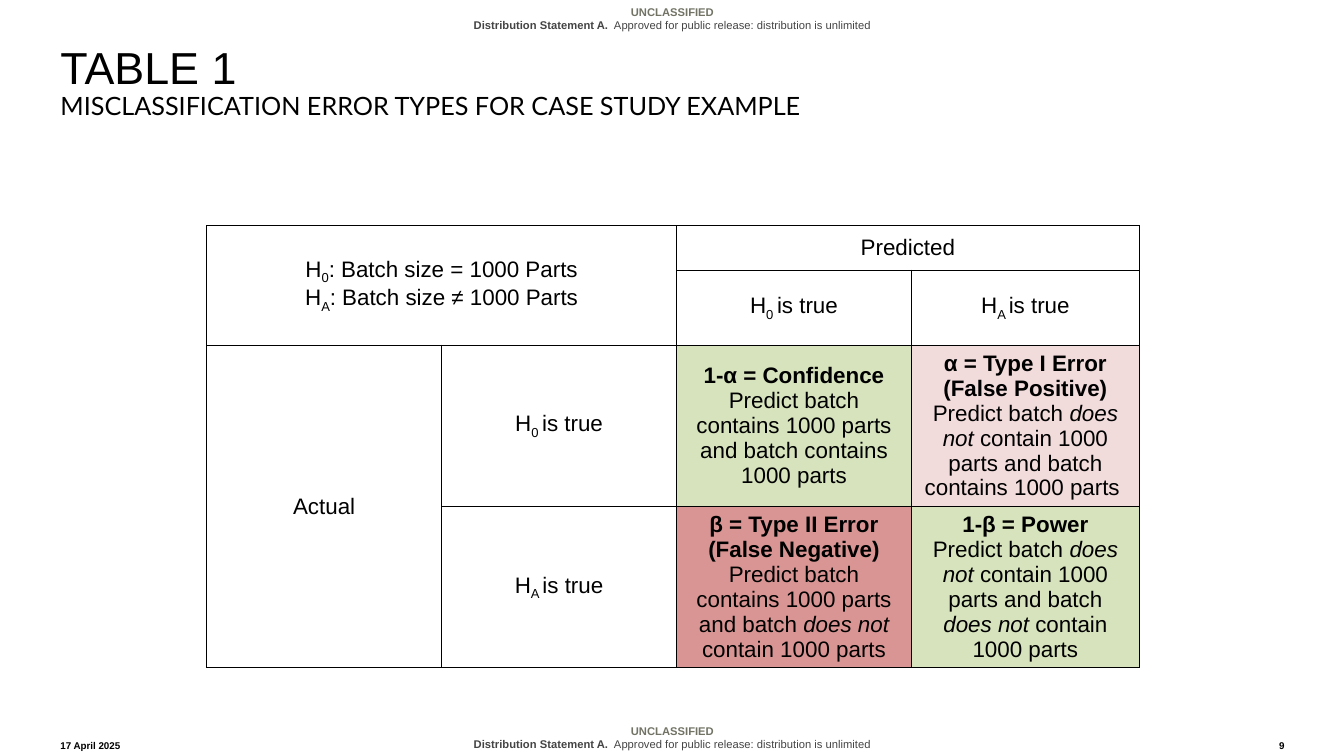
from lxml import etree
from pptx import Presentation
from pptx import util as u
from pptx.dml.color import RGBColor
from pptx.enum import text
from pptx.oxml import ns

COLORS = {"ink": "000000", "marking": "727365", "statement": "444444",
          "correct": "D6E3BC", "type_1": "F2DBDB", "type_2": "D99594"}
LEFT, CENTER, RIGHT = text.PP_ALIGN.LEFT, text.PP_ALIGN.CENTER, text.PP_ALIGN.RIGHT
TOP, BOTTOM = text.MSO_ANCHOR.TOP, text.MSO_ANCHOR.BOTTOM

deck = Presentation()
deck.slide_width, deck.slide_height = u.Inches(13.33), u.Inches(7.5)
slide = deck.slides.add_slide(deck.slide_layouts[6])


def add_text_frame(left, top, width, height, anchor, side, edge):
    frame = slide.shapes.add_textbox(*map(u.Inches, (left, top, width, height))).text_frame
    frame.word_wrap = True
    frame.vertical_anchor = anchor
    frame.margin_left = frame.margin_right = u.Inches(side)
    frame.margin_top = frame.margin_bottom = u.Inches(edge)
    return frame


def write(paragraph, runs, size, color="ink", align=CENTER, bold=False):
    paragraph.alignment = align
    paragraph.font.name = "Arial"
    paragraph.font.size = u.Pt(size)
    paragraph.font.bold = bold
    paragraph.font.color.rgb = RGBColor.from_string(COLORS[color])
    for words, style in runs:
        run = paragraph.add_run()
        run.text = words
        if style == "bold":
            run.font.bold = True
        elif style == "italic":
            run.font.italic = True
        elif style == "sub":
            run.font._element.set("baseline", "-25000")


for top, anchor, side in ((7.13, BOTTOM, 0), (0, TOP, 0.1)):
    banner = add_text_frame(1.52, top, 10.3, 0.37, anchor, side, 0.05)
    write(banner.paragraphs[0], [("UNCLASSIFIED", "")], 8, "marking", bold=True)
    write(banner.add_paragraph(),
          [("Distribution Statement A.", "bold"),
           ("\u00a0 Approved for public release: distribution is unlimited", "")],
          8, "statement")

heading = add_text_frame(0.6, 0.45, 9, 1, TOP, 0, 0).paragraphs[0]
heading.line_spacing = 0.9
write(heading, [("TABLE 1", "")], 32, align=LEFT)
heading.add_line_break()
subtitle = heading.add_run()
subtitle.text = "MISCLASSIFICATION ERROR TYPES FOR CASE STUDY EXAMPLE"
subtitle.font.name, subtitle.font.size = "Lato", u.Pt(18)

for left, width, words, align in ((0.6, 0.9, "17 April 2025", LEFT), (12.3, 0.44, "9", RIGHT)):
    footer = add_text_frame(left, 7.25, width, 0.25, BOTTOM, 0, 0.05)
    write(footer.paragraphs[0], [(words, "")], 7, align=align, bold=True)

null_true = [[("H", ""), ("0 ", "sub"), ("is true", "")]]
alternative_true = [[("H", ""), ("A ", "sub"), ("is true", "")]]
does_not = ("does not", "italic")
WIDE, TIGHT = (0.13, 0.07), (0.1, 0)
cells = {
    (0, 0): (WIDE, None, [[("H", ""), ("0", "sub"), (": Batch size = 1000 Parts", "")],
                          [("H", ""), ("A", "sub"), (": Batch size ≠ 1000 Parts", "")]]),
    (0, 2): (WIDE, None, [[("Predicted", "")]]),
    (1, 2): (TIGHT, None, null_true),
    (1, 3): (TIGHT, None, alternative_true),
    (2, 0): (WIDE, None, [[("Actual", "")]]),
    (2, 1): (TIGHT, None, null_true),
    (3, 1): (TIGHT, None, alternative_true),
    (2, 2): (TIGHT, "correct", [
        [("1-α = Confidence", "bold")],
        [("Predict batch contains 1000 parts and batch contains 1000 parts", "")]]),
    (2, 3): (TIGHT, "type_1", [
        [("α = Type I Error (False Positive)", "bold")],
        [("Predict batch ", ""), does_not,
         (" contain 1000 parts and batch contains 1000 parts ", "")]]),
    (3, 2): (TIGHT, "type_2", [
        [("β = Type II Error (False Negative)", "bold")],
        [("Predict batch contains 1000 parts and batch ", ""), does_not,
         (" contain 1000 parts", "")]]),
    (3, 3): (TIGHT, "correct", [
        [("1-β = Power", "bold")],
        [("Predict batch ", ""), does_not, (" contain 1000 parts and batch ", ""),
         does_not, (" contain 1000 parts", "")]]),
}

column_widths = (2.33, 2.33, 2.33, 2.26)
row_heights = (0.44, 0.7, 1.48, 1.48)
errors = slide.shapes.add_table(4, 4, u.Inches(2.05), u.Inches(2.24),
                                u.Inches(sum(column_widths)),
                                u.Inches(sum(row_heights))).table
errors.first_row = errors.horz_banding = False
for column, width in zip(errors.columns, column_widths):
    column.width = u.Inches(width)
for row, height in zip(errors.rows, row_heights):
    row.height = u.Inches(height)
for first, last in (((0, 0), (1, 1)), ((0, 2), (0, 3)), ((2, 0), (3, 0))):
    errors.cell(*first).merge(errors.cell(*last))

for row in range(4):
    for column in range(4):
        cell = errors.cell(row, column)
        (side, edge), fill, lines = cells.get((row, column), (TIGHT, None, [[]]))
        cell.vertical_anchor = text.MSO_ANCHOR.MIDDLE
        cell.margin_left = cell.margin_right = u.Inches(side)
        cell.margin_top = cell.margin_bottom = u.Inches(edge)
        for index, runs in enumerate(lines):
            frame = cell.text_frame
            write(frame.add_paragraph() if index else frame.paragraphs[0], runs, 16)
        properties = cell._tc.get_or_add_tcPr()
        for border in ("a:lnL", "a:lnR", "a:lnT", "a:lnB"):
            line = etree.SubElement(properties, ns.qn(border), w=str(u.Pt(1)))
            ink = etree.SubElement(line, ns.qn("a:solidFill"))
            etree.SubElement(ink, ns.qn("a:srgbClr"), val=COLORS["ink"])
        if fill:
            cell.fill.solid()
            cell.fill.fore_color.rgb = RGBColor.from_string(COLORS[fill])
        else:
            cell.fill.background()

deck.save("out.pptx")
